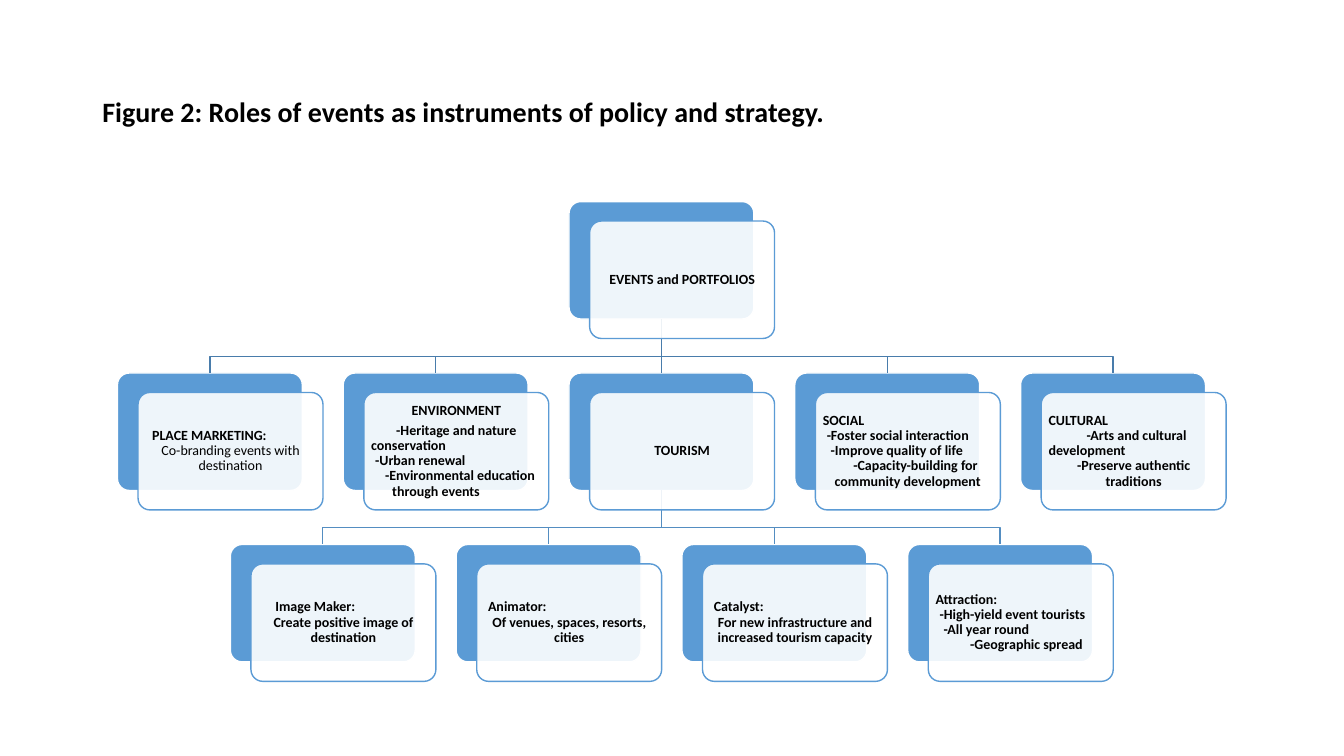
from dataclasses import dataclass

from lxml.etree import SubElement
from pptx import Presentation
from pptx.dml.color import RGBColor
from pptx.enum.shapes import MSO_CONNECTOR, MSO_SHAPE
from pptx.enum.text import MSO_ANCHOR, PP_ALIGN
from pptx.oxml.ns import qn
from pptx.util import Cm, Pt

FIRST_LEFT, FIRST_TOP = 2.96, 5.08
COLUMN_STEP, ROW_STEP = 5.69, 4.32
CARD_WIDTH, CARD_HEIGHT = 4.66, 2.96
FRONT_SHIFT_X, FRONT_SHIFT_Y = 0.52, 0.49
BEND_DROP = 0.94
BLUE, WHITE, BLACK = "5B9BD5", "FFFFFF", "000000"
UPPER_LINK, LOWER_LINK = "497CAB", "538DC1"


@dataclass
class Line:
    """A paragraph: centred without left; first is the first-line indent (cm)."""
    text: str
    left: float | None = None
    first: float = 0
    bold: bool = True
    after: float = 0


ROOT = (2, 0, [Line("EVENTS and PORTFOLIOS")])
TOURISM = (2, 1, [Line("TOURISM")])
POLICY_ROLES = [
    (0, 1, [Line("PLACE MARKETING:", 0.17),
            Line("Co-branding events with destination", bold=False)]),
    (1, 1, [Line("ENVIRONMENT", after=3.5),
            Line("-Heritage and nature conservation", 0, 0.63),
            Line("-Urban renewal", 0.1),
            Line("-Environmental education through events", 0.53, -0.18)]),
    TOURISM,
    (3, 1, [Line("SOCIAL", 0),
            Line("-Foster social interaction", 0.1),
            Line("-Improve quality of life", 0.2),
            Line("-Capacity-building for community development", 0.3, 0.47)]),
    (4, 1, [Line("CULTURAL", 0),
            Line("-Arts and cultural development", 0, 0.96),
            Line("-Preserve authentic traditions")]),
]
TOURISM_ROLES = [
    (0.5, 2, [Line("Image Maker:", 0.43),
              Line("Create positive image of destination")]),
    (1.5, 2, [Line("Animator:", 0.1),
              Line("Of venues, spaces, resorts, cities")]),
    (2.5, 2, [Line("Catalyst:", 0.1),
              Line("For new infrastructure and increased tourism capacity")]),
    (3.5, 2, [Line("Attraction:", 0),
              Line("-High-yield event tourists", 0.1),
              Line("-All year round", 0.2),
              Line("-Geographic spread", 0.87)]),
]


def rgb(hex_colour):
    return RGBColor.from_string(hex_colour)


def set_line(shape, colour):
    shape.line.color.rgb = rgb(colour)
    shape.line.width = Pt(1)


def write_lines(shape, lines, size, margin):
    frame = shape.text_frame
    frame_format = {"word_wrap": True, "vertical_anchor": MSO_ANCHOR.MIDDLE}
    for side in ("left", "right", "top", "bottom"):
        frame_format[f"margin_{side}"] = Cm(margin)
    for name, value in frame_format.items():
        setattr(frame, name, value)
    for index, line in enumerate(lines):
        paragraph = frame.add_paragraph() if index else frame.paragraphs[0]
        centred = line.left is None
        paragraph_format = {
            "alignment": PP_ALIGN.CENTER if centred else PP_ALIGN.LEFT,
            "line_spacing": 0.9,
            "space_before": Pt(0),
            "space_after": Pt(line.after),
        }
        for name, value in paragraph_format.items():
            setattr(paragraph, name, value)
        properties = paragraph._p.get_or_add_pPr()
        properties.set("marL", str(Cm(line.left or 0)))
        properties.set("indent", str(Cm(line.first)))
        run = paragraph.add_run()
        run.text = line.text
        font_format = {"name": "Calibri", "size": Pt(size), "bold": line.bold}
        for name, value in font_format.items():
            setattr(run.font, name, value)
        run.font.color.rgb = rgb(BLACK)


def add_title(slide, text):
    title = slide.shapes.add_textbox(Cm(2.33), Cm(1.01), Cm(29.21), Cm(3.68))
    write_lines(title, [Line(text, 0)], 20, 0.25)


def add_card(slide, column, row, fill, outline):
    card = slide.shapes.add_shape(
        MSO_SHAPE.ROUNDED_RECTANGLE,
        Cm(FIRST_LEFT + column * COLUMN_STEP), Cm(FIRST_TOP + row * ROW_STEP),
        Cm(CARD_WIDTH), Cm(CARD_HEIGHT))
    card.adjustments[0] = 0.1
    card.shadow.inherit = False
    card.fill.solid()
    card.fill.fore_color.rgb = rgb(fill)
    set_line(card, outline)
    return card


def add_front_card(slide, column, row, lines):
    """Add the slightly see-through card that carries the text."""
    card = add_card(slide, column, row, WHITE, BLUE)
    card.left += Cm(FRONT_SHIFT_X)
    card.top += Cm(FRONT_SHIFT_Y)
    colour = card._element.spPr.find(qn("a:solidFill"))[0]
    SubElement(colour, qn("a:alpha"), val="90000")
    write_lines(card, lines, 10, 0.1)


def add_straight_link(slide, parent, child, colour):
    link = slide.shapes.add_connector(MSO_CONNECTOR.STRAIGHT, 0, 0, 0, 0)
    link.begin_connect(parent, 2)
    link.end_connect(child, 0)
    set_line(link, colour)
    SubElement(link._element.spPr, qn("a:effectLst"))


def add_bent_link(slide, parent, child, colour):
    start_x = parent.left + parent.width // 2
    start_y = parent.top + parent.height
    end_x = child.left + child.width // 2
    bend_y = start_y + Cm(BEND_DROP)
    outline = slide.shapes.build_freeform(start_x, start_y)
    outline.add_line_segments(
        [(start_x, bend_y), (end_x, bend_y), (end_x, child.top)], close=False)
    link = outline.convert_to_shape()
    link.shadow.inherit = False
    link.fill.background()
    set_line(link, colour)


def add_links(slide, parent, children, colour):
    for child in children:
        aligned = child.left == parent.left
        add_link = add_straight_link if aligned else add_bent_link
        add_link(slide, parent, child, colour)


def main():
    presentation = Presentation()
    presentation.slide_width, presentation.slide_height = Cm(33.87), Cm(19.05)
    slide = presentation.slides.add_slide(presentation.slide_layouts[6])
    add_title(slide, "Figure 2: Roles of events as instruments of policy and strategy.")

    root, *backs = [add_card(slide, column, row, BLUE, WHITE)
                    for column, row, _ in [ROOT, *POLICY_ROLES, *TOURISM_ROLES]]
    policy_backs = backs[:len(POLICY_ROLES)]
    tourism_backs = backs[len(POLICY_ROLES):]
    tourism = policy_backs[POLICY_ROLES.index(TOURISM)]
    add_links(slide, root, policy_backs, UPPER_LINK)
    add_links(slide, tourism, tourism_backs, LOWER_LINK)

    for column, row, lines in [ROOT, *POLICY_ROLES, *TOURISM_ROLES]:
        add_front_card(slide, column, row, lines)
    presentation.save("out.pptx")


if __name__ == "__main__":
    main()
